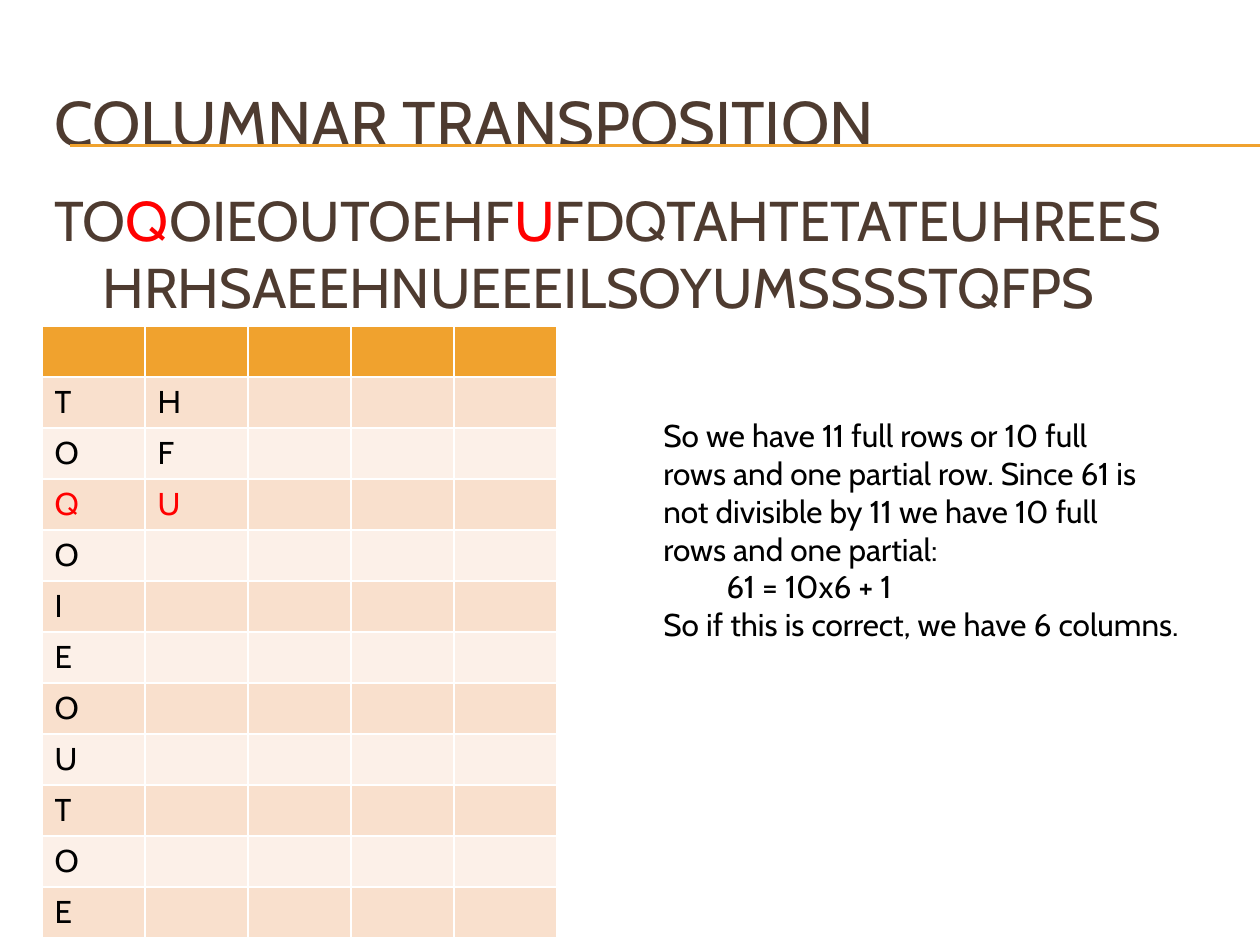
"""Build the columnar transposition slide."""
from typing import NamedTuple

from lxml import etree
from pptx import Presentation
from pptx.dml.color import RGBColor
from pptx.enum.shapes import MSO_CONNECTOR
from pptx.enum.text import MSO_ANCHOR, PP_ALIGN
from pptx.oxml.ns import qn
from pptx.util import Emu, Pt

STRAIGHT = MSO_CONNECTOR.STRAIGHT
MIDDLE, TOP = MSO_ANCHOR.MIDDLE, MSO_ANCHOR.TOP
LEFT = PP_ALIGN.LEFT

FONT = "Cabin"
BROWN, ORANGE, RED, BLACK = "4E3B30", "F0A22E", "FF0000", "000000"
BANDS = ("F9E0CD", "FCF0E8")

COLUMN_COUNT, COLUMN_WIDTH, ROW_HEIGHT = 5, 103, 51
COLUMN_LETTERS = ("TOQOIEOUTOE", "HFU")
RED_ROW = 3


class Span(NamedTuple):
    """A stretch of text in one colour."""
    text: str
    color: str


class Box(NamedTuple):
    """A place on the slide in px."""
    left: int
    top: int
    width: int
    height: int


TITLE_BOX = Box(42, 63, 1197, 116)
CIPHER_BOX = Box(42, 179, 1134, 210)
TABLE_BOX = Box(42, 326, COLUMN_COUNT * COLUMN_WIDTH, 12 * ROW_HEIGHT)
NOTE_BOX = Box(651, 410, 554, 242)

CIPHER = (
    Span("TO", BROWN),
    Span("Q", RED),
    Span("OIEOUTOEHF", BROWN),
    Span("U", RED),
    Span("FDQTAHTETATEUHREESHRHSAEEHNUEEEILSOYUMSSSSTQFPS", BROWN),
)
NOTES = (
    "So we have 11 full rows or 10 full",
    "rows and one partial row. Since 61 is",
    "not divisible by 11 we have 10 full",
    "rows and one partial:",
    "\t61 = 10x6 + 1",
    "So if this is correct, we have 6 columns.",
)


def px(length: int) -> Emu:
    """Turn px into EMU."""
    return Emu(round(length * 914400 / 126))


def rgb(color: str) -> RGBColor:
    """Turn a hex string into a colour."""
    return RGBColor.from_string(color)


def apply(target, values: dict) -> None:
    """Set each named attribute on the target."""
    for name, value in values.items():
        setattr(target, name, value)


def write(para, spans, size: int) -> None:
    """Add coloured spans to a left-aligned paragraph."""
    para.alignment = LEFT
    for span in spans:
        run = para.add_run()
        run.text = span.text
        apply(run.font, {"name": FONT, "size": Pt(size), "bold": False})
        run.font.color.rgb = rgb(span.color)


def add_rule(page, y: int) -> None:
    """Draw a thin rule that runs off the right edge."""
    rule = page.shapes.add_connector(STRAIGHT, px(70), px(y), px(1260), px(y))
    rule.line.color.rgb = rgb(ORANGE)
    rule.line.width = Pt(0.75)
    etree.SubElement(rule._element.spPr, qn("a:effectLst"))


def add_title(page, text: str) -> None:
    """Place and fill the title placeholder."""
    title = page.shapes.title
    apply(title, {name: px(value) for name, value in TITLE_BOX._asdict().items()})
    apply(title.text_frame, {"vertical_anchor": MIDDLE, "word_wrap": True})
    write(title.text_frame.paragraphs[0], [Span(text, BROWN)], 36)


def add_text(page, box: Box, paragraphs, size: int):
    """Add a wrapped text box and return its frame."""
    frame = page.shapes.add_textbox(*map(px, box)).text_frame
    apply(frame, {"vertical_anchor": TOP, "word_wrap": True})
    for index, spans in enumerate(paragraphs):
        para = frame.add_paragraph() if index else frame.paragraphs[0]
        write(para, spans, size)
    return frame


def add_grid(page) -> None:
    """Add the banded table with letters running down its columns."""
    row_count = len(COLUMN_LETTERS[0]) + 1
    table = page.shapes.add_table(row_count, COLUMN_COUNT, *map(px, TABLE_BOX)).table
    for column in table.columns:
        column.width = px(COLUMN_WIDTH)
    for index, row in enumerate(table.rows):
        row.height = px(ROW_HEIGHT)
        for cell in row.cells:
            cell.fill.solid()
            cell.fill.fore_color.rgb = rgb(BANDS[(index - 1) % 2] if index else ORANGE)
    for column, letters in enumerate(COLUMN_LETTERS):
        for row, letter in enumerate(letters, start=1):
            color = RED if row == RED_ROW else BLACK
            para = table.cell(row, column).text_frame.paragraphs[0]
            write(para, [Span(letter, color)], 18)


def main() -> None:
    """Build and save the deck."""
    deck = Presentation()
    apply(deck, {"slide_width": px(1260), "slide_height": px(945)})
    page = deck.slides.add_slide(deck.slide_layouts[5])
    for y in (145, 146):
        add_rule(page, y)
    add_title(page, "COLUMNAR TRANSPOSITION")
    cipher = add_text(page, CIPHER_BOX, [CIPHER], 32)
    hanging = {"marL": str(px(48)), "indent": str(-px(48))}
    for name, value in hanging.items():
        cipher.paragraphs[0]._p.get_or_add_pPr().set(name, value)
    add_grid(page)
    add_text(page, NOTE_BOX, [[Span(line, BLACK)] for line in NOTES], 18)
    deck.save("out.pptx")


if __name__ == "__main__":
    main()
